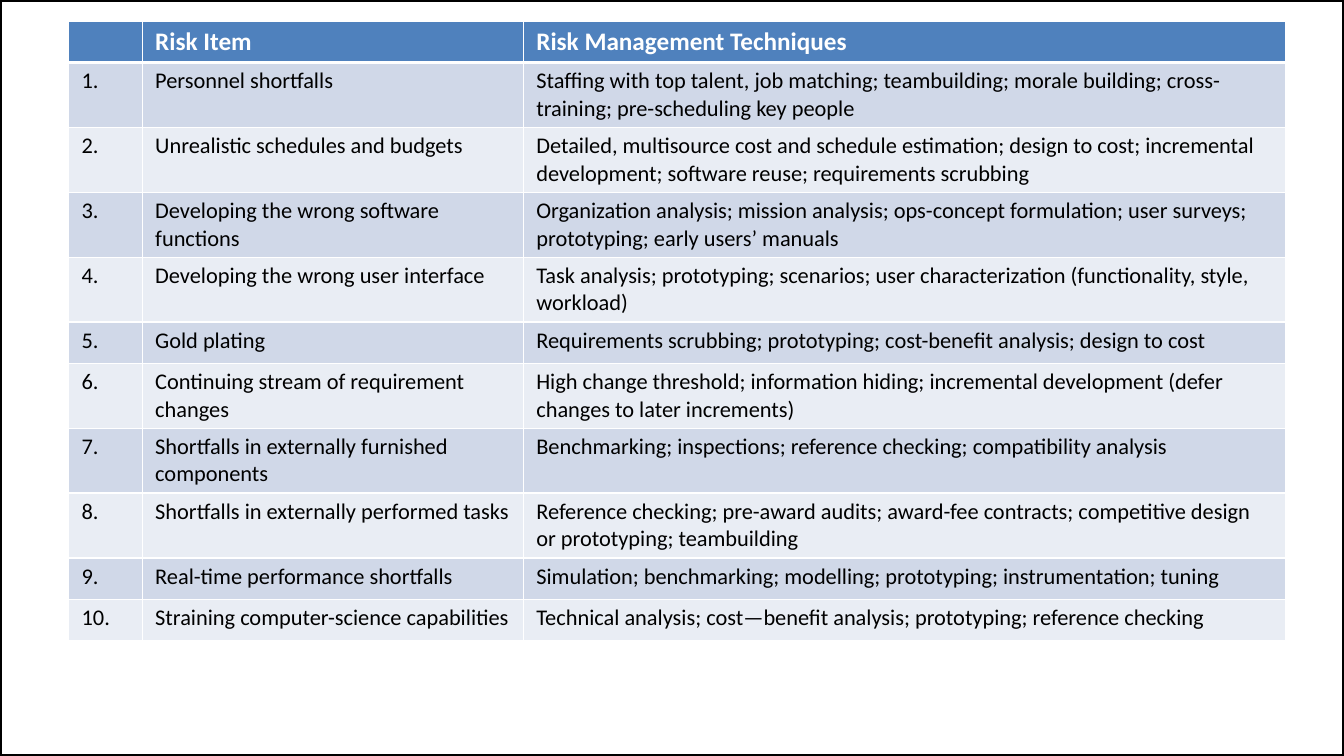
from lxml.etree import fromstring
from pptx import Presentation
from pptx.dml.color import RGBColor
from pptx.enum.shapes import MSO_SHAPE
from pptx.oxml.ns import nsdecls
from pptx.util import Inches, Pt

WHITE = RGBColor(0xFF, 0xFF, 0xFF)
BLACK = RGBColor(0x00, 0x00, 0x00)
HEADER_BLUE = RGBColor(0x4F, 0x81, 0xBD)
BAND_DARK = RGBColor(0xD0, 0xD8, 0xE8)
BAND_LIGHT = RGBColor(0xE9, 0xED, 0xF4)

COLUMN_WIDTHS = [0.73, 3.78, 7.56]
ROW_HEIGHT = 0.41
HEADINGS = ["", "Risk Item", "Risk Management Techniques"]
RISKS = [
    ("Personnel shortfalls",
     "Staffing with top talent, job matching; teambuilding; morale building; "
     "cross-training; pre-scheduling key people"),
    ("Unrealistic schedules and budgets",
     "Detailed, multisource cost and schedule estimation; design to cost; "
     "incremental development; software reuse; requirements scrubbing"),
    ("Developing the wrong software functions",
     "Organization analysis; mission analysis; ops-concept formulation; "
     "user surveys; prototyping; early users’ manuals"),
    ("Developing the wrong user interface",
     "Task analysis; prototyping; scenarios; user characterization "
     "(functionality, style, workload)"),
    ("Gold plating",
     "Requirements scrubbing; prototyping; cost-benefit analysis; design to cost"),
    ("Continuing stream of requirement changes",
     "High change threshold; information hiding; incremental development "
     "(defer changes to later increments)"),
    ("Shortfalls in externally furnished components",
     "Benchmarking; inspections; reference checking; compatibility analysis"),
    ("Shortfalls in externally performed tasks",
     "Reference checking; pre-award audits; award-fee contracts; "
     "competitive design or prototyping; teambuilding"),
    ("Real-time performance shortfalls",
     "Simulation; benchmarking; modelling; prototyping; instrumentation; tuning"),
    ("Straining computer-science capabilities",
     "Technical analysis; cost—benefit analysis; prototyping; reference checking"),
]


def write_cell(cell, text, size, color, bold):
    cell.margin_left = cell.margin_right = Inches(0.13)
    cell.margin_top = cell.margin_bottom = Inches(0.05)
    cell.text = text
    font = cell.text_frame.paragraphs[0].font
    for run in cell.text_frame.paragraphs[0].runs:
        font = run.font
    font.name = "Calibri"
    font.size = Pt(size)
    font.bold = bold
    font.color.rgb = color


def set_borders(cell, top, bottom):
    widths = {"lnL": 1, "lnR": 1, "lnT": top, "lnB": bottom}
    properties = cell._tc.get_or_add_tcPr()
    for position, (side, width) in enumerate(widths.items()):
        properties.insert(position, fromstring(
            f'<a:{side} {nsdecls("a")} w="{Pt(width)}"><a:solidFill>'
            f'<a:srgbClr val="{WHITE}"/></a:solidFill></a:{side}>'))


presentation = Presentation()
presentation.slide_width = Inches(13.33)
presentation.slide_height = Inches(7.5)
slide = presentation.slides.add_slide(presentation.slide_layouts[6])

# Slide frame
frame = slide.shapes.add_shape(
    MSO_SHAPE.RECTANGLE, 0, 0, presentation.slide_width, presentation.slide_height)
frame.shadow.inherit = False
frame.fill.background()
frame.line.color.rgb = BLACK
frame.line.width = Pt(3)

# Risk table
rows = [HEADINGS] + [(f"{number}.", item, techniques)
                     for number, (item, techniques) in enumerate(RISKS, 1)]
risk_table = slide.shapes.add_table(
    len(rows), len(COLUMN_WIDTHS), Inches(0.68), Inches(0.21),
    Inches(sum(COLUMN_WIDTHS)), Inches(ROW_HEIGHT * len(rows))).table
for column, width in zip(risk_table.columns, COLUMN_WIDTHS):
    column.width = Inches(width)

for row_index, row in enumerate(rows):
    risk_table.rows[row_index].height = Inches(ROW_HEIGHT)
    is_header = row_index == 0
    band = BAND_DARK if row_index % 2 else BAND_LIGHT
    for column_index, text in enumerate(row):
        cell = risk_table.cell(row_index, column_index)
        write_cell(cell, text, size=18 if is_header else 16,
                   color=WHITE if is_header else BLACK, bold=is_header)
        cell.fill.solid()
        cell.fill.fore_color.rgb = HEADER_BLUE if is_header else band
        # The rule under the header is thicker than the grid
        set_borders(cell, top=3 if row_index == 1 else 1,
                    bottom=3 if is_header else 1)

presentation.save("out.pptx")
